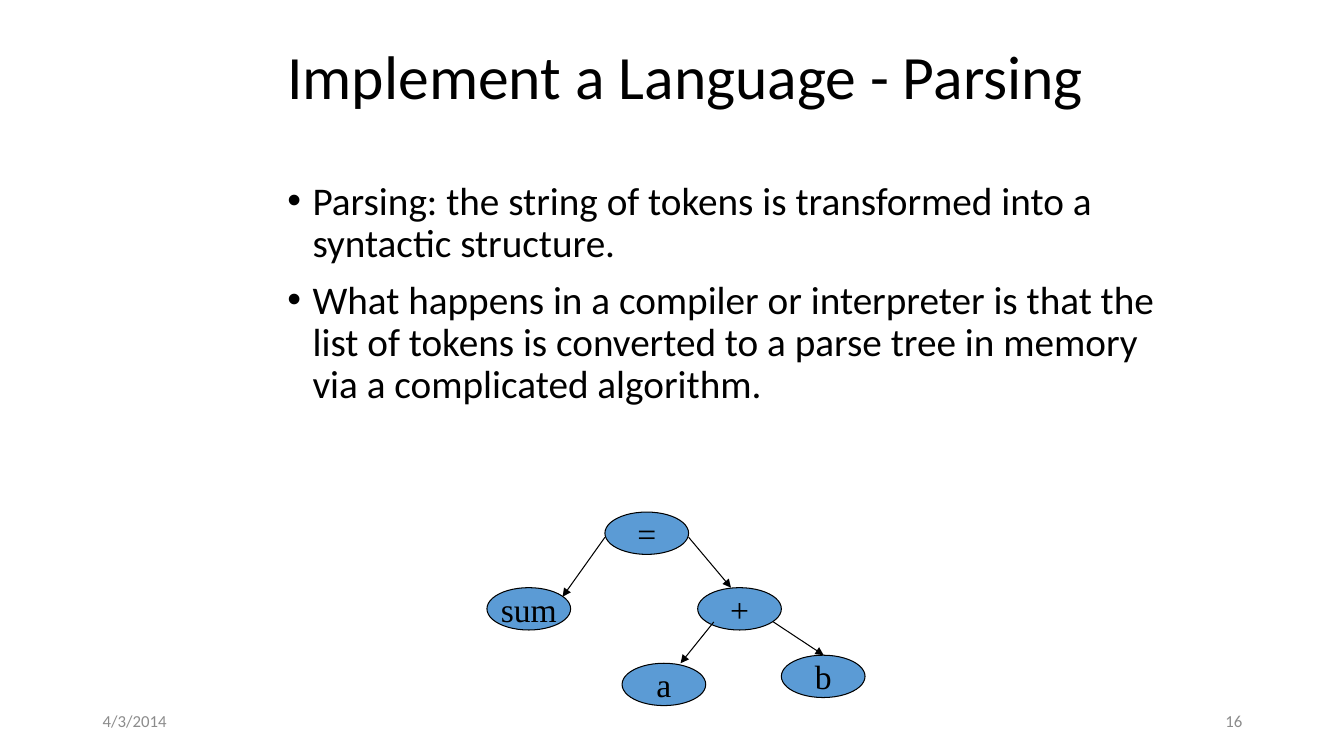
from lxml import etree
from pptx import Presentation
from pptx.dml.color import RGBColor
from pptx.enum.shapes import MSO_CONNECTOR, MSO_SHAPE
from pptx.enum.text import MSO_ANCHOR, MSO_AUTO_SIZE, PP_ALIGN
from pptx.oxml.ns import qn
from pptx.util import Inches, Pt

LEFT, CENTER, RIGHT = PP_ALIGN.LEFT, PP_ALIGN.CENTER, PP_ALIGN.RIGHT
TOP, MIDDLE = MSO_ANCHOR.TOP, MSO_ANCHOR.MIDDLE
NO_FIT = MSO_AUTO_SIZE.NONE
OVAL, STRAIGHT = MSO_SHAPE.OVAL, MSO_CONNECTOR.STRAIGHT

COLORS = {"ink": "000000", "node": "5B9BD5", "foot": "8C8C8C"}
SANS, SERIF = "Calibri", "Times New Roman"

TITLE = "Implement a Language - Parsing"
POINTS = [
    "Parsing: the string of tokens is transformed into a syntactic structure.",
    "What happens in a compiler or interpreter is that the list of tokens "
    "is converted to a parse tree in memory via a complicated algorithm.",
]
NODE_W, NODE_H = 0.83, 0.42
NODES = [("=", 6, 5.08), ("sum", 4.83, 5.83), ("+", 6.92, 5.83),
         ("a", 6.17, 6.58), ("b", 7.75, 6.5)]
ARROWS = [(6, 5.33, 5.58, 5.92), (6.83, 5.33, 7.25, 5.83),
          (7.08, 6.17, 6.75, 6.58), (7.67, 6.17, 8.17, 6.5)]


def color(name):
    return RGBColor.from_string(COLORS[name])


def place(shape, x, y, w, h):
    shape.left, shape.top = Inches(x), Inches(y)
    shape.width, shape.height = Inches(w), Inches(h)


def write(shape, lines, size, font=SANS, ink="ink", align=LEFT,
          anchor=MIDDLE, wrap=True):
    """Fill a shape with one paragraph per line and return the paragraphs."""
    frame = shape.text_frame
    frame.text = "\n".join(lines)
    frame.auto_size = NO_FIT
    frame.word_wrap = wrap
    frame.vertical_anchor = anchor
    for para in frame.paragraphs:
        para.alignment = align
        para.font.size = Pt(size)
        para.font.name = font
        para.font.color.rgb = color(ink)
    return frame.paragraphs


def add_bullet(para):
    props = para._p.get_or_add_pPr()
    props.set("marL", str(Inches(0.25)))
    props.set("indent", str(-Inches(0.25)))
    face = etree.Element(qn("a:buFont"), typeface="Arial")
    mark = etree.Element(qn("a:buChar"), char="•")
    props.find(qn("a:spcBef")).addnext(face)
    face.addnext(mark)


def add_body(slide):
    body = slide.placeholders[1]
    place(body, 2.75, 1.75, 8.92, 4.95)
    for para in write(body, POINTS, 28, anchor=TOP):
        para.line_spacing = 0.9
        para.space_before = Pt(10)
        add_bullet(para)


def add_title(slide):
    title = slide.shapes.title
    place(title, 2.75, 0.25, 8.92, 1.08)
    write(title, [TITLE], 44)[0].line_spacing = 0.9


def add_foot(slide, text, x, align):
    box = slide.shapes.add_textbox(Inches(x), Inches(6.95),
                                   Inches(3), Inches(0.4))
    write(box, [text], 12, ink="foot", align=align)


def add_node(slide, text, x, y):
    node = slide.shapes.add_shape(OVAL, Inches(x), Inches(y),
                                  Inches(NODE_W), Inches(NODE_H))
    node.shadow.inherit = False
    node.fill.solid()
    node.fill.fore_color.rgb = color("node")
    node.line.color.rgb = color("ink")
    node.line.width = Pt(0.75)
    write(node, [text], 24, SERIF, align=CENTER, wrap=False)


def add_arrow(slide, *ends):
    arrow = slide.shapes.add_connector(STRAIGHT, *map(Inches, ends))
    arrow.line.color.rgb = color("ink")
    arrow.line.width = Pt(0.75)
    line = arrow.line._get_or_add_ln()
    etree.SubElement(line, qn("a:tailEnd"), type="triangle")
    etree.SubElement(arrow._element.spPr, qn("a:effectLst"))


def main():
    deck = Presentation()
    deck.slide_width, deck.slide_height = Inches(13.33), Inches(7.5)
    slide = deck.slides.add_slide(deck.slide_layouts.get_by_name("Title and Content"))
    add_foot(slide, "4/3/2014", 0.92, LEFT)
    add_foot(slide, "16", 9.42, RIGHT)
    add_title(slide)
    add_body(slide)
    for node in NODES:
        add_node(slide, *node)
    for ends in ARROWS:
        add_arrow(slide, *ends)
    deck.save("out.pptx")


if __name__ == "__main__":
    main()
